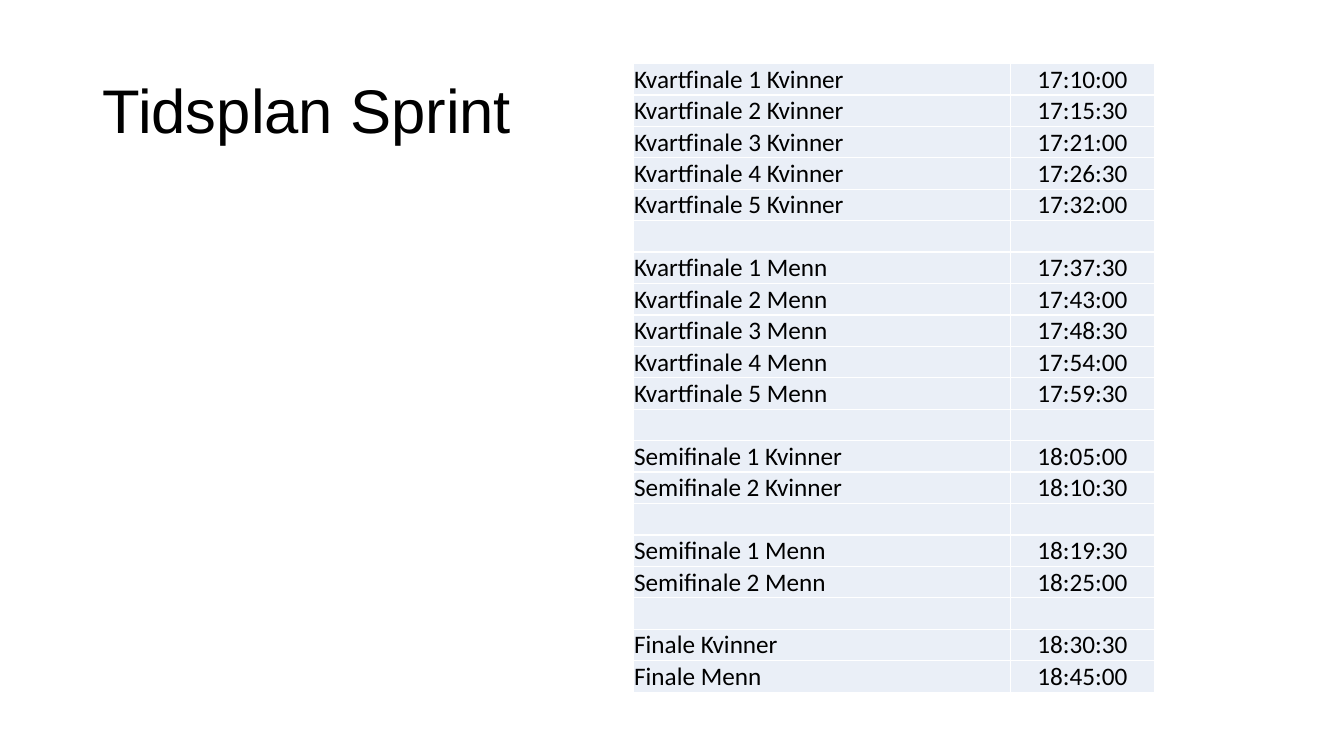
import pptx
import pptx.dml.color
import pptx.enum.text
import pptx.oxml
import pptx.oxml.ns
import pptx.util
from pptx.util import Inches

ANCHOR = pptx.enum.text.MSO_ANCHOR
ALIGN = pptx.enum.text.PP_ALIGN
BLACK, WHITE, PALE_BLUE = "000000", "FFFFFF", "EAEFF7"
HEATS = [
    [("Kvartfinale 1 Kvinner", "17:10:00"),
     ("Kvartfinale 2 Kvinner", "17:15:30"),
     ("Kvartfinale 3 Kvinner", "17:21:00"),
     ("Kvartfinale 4 Kvinner", "17:26:30"),
     ("Kvartfinale 5 Kvinner", "17:32:00")],
    [("Kvartfinale 1 Menn", "17:37:30"),
     ("Kvartfinale 2 Menn", "17:43:00"),
     ("Kvartfinale 3 Menn", "17:48:30"),
     ("Kvartfinale 4 Menn", "17:54:00"),
     ("Kvartfinale 5 Menn", "17:59:30")],
    [("Semifinale 1 Kvinner", "18:05:00"),
     ("Semifinale 2 Kvinner", "18:10:30")],
    [("Semifinale 1 Menn", "18:19:30"),
     ("Semifinale 2 Menn", "18:25:00")],
    [("Finale Kvinner", "18:30:30"),
     ("Finale Menn", "18:45:00")],
]


def color(value):
    return pptx.dml.color.RGBColor.from_string(value)


def apply(target, formats):
    for attribute, value in formats.items():
        setattr(target, attribute, value)


def write(paragraph, text, font, size):
    run = paragraph.add_run()
    run.text = text
    apply(run.font, {"name": font, "size": pptx.util.Pt(size)})
    run.font.color.rgb = color(BLACK)


def add_title(slide, text):
    title = slide.shapes.add_textbox(Inches(0.92), Inches(0.4), Inches(4.66), Inches(1.45))
    apply(title.text_frame, {"word_wrap": True, "vertical_anchor": ANCHOR.MIDDLE})
    heading = title.text_frame.paragraphs[0]
    heading.line_spacing = 0.9
    write(heading, text, "Arial", 44)


def add_borders(cell, value):
    properties = cell._tc.get_or_add_tcPr()
    for side in ("lnL", "lnR", "lnT", "lnB"):
        properties.append(pptx.oxml.parse_xml(
            f'<a:{side} {pptx.oxml.ns.nsdecls("a")} w="12700"><a:solidFill>'
            f'<a:srgbClr val="{value}"/></a:solidFill></a:{side}>'))


def fill_cell(cell, text, alignment):
    add_borders(cell, WHITE)
    cell.fill.solid()
    cell.fill.fore_color.rgb = color(PALE_BLUE)
    apply(cell, {
        "margin_left": Inches(0.01), "margin_right": Inches(0.01),
        "margin_top": pptx.util.Pt(0.5), "margin_bottom": 0,
        "vertical_anchor": ANCHOR.BOTTOM,
    })
    entry = cell.text_frame.paragraphs[0]
    entry.alignment = alignment
    if text:
        write(entry, text, "Calibri", 18)


def add_schedule(slide, groups):
    entries = list(groups[0])
    for group in groups[1:]:
        entries += [("", ""), *group]
    schedule = slide.shapes.add_table(
        len(entries), 2, Inches(6.28), Inches(0.63), Inches(5.17), Inches(6.24)).table
    apply(schedule, {"first_row": False, "horz_banding": False})
    for column, width in zip(schedule.columns, (3.74, 1.43)):
        column.width = Inches(width)
    for row, (heat, start) in zip(schedule.rows, entries):
        fill_cell(row.cells[0], heat, ALIGN.LEFT)
        fill_cell(row.cells[1], start, ALIGN.CENTER)


def main():
    presentation = pptx.Presentation()
    apply(presentation, {"slide_width": Inches(13.33), "slide_height": Inches(7.5)})
    slide = presentation.slides.add_slide(presentation.slide_layouts[6])
    add_title(slide, "Tidsplan Sprint")
    add_schedule(slide, HEATS)
    presentation.save("out.pptx")


if __name__ == "__main__":
    main()
